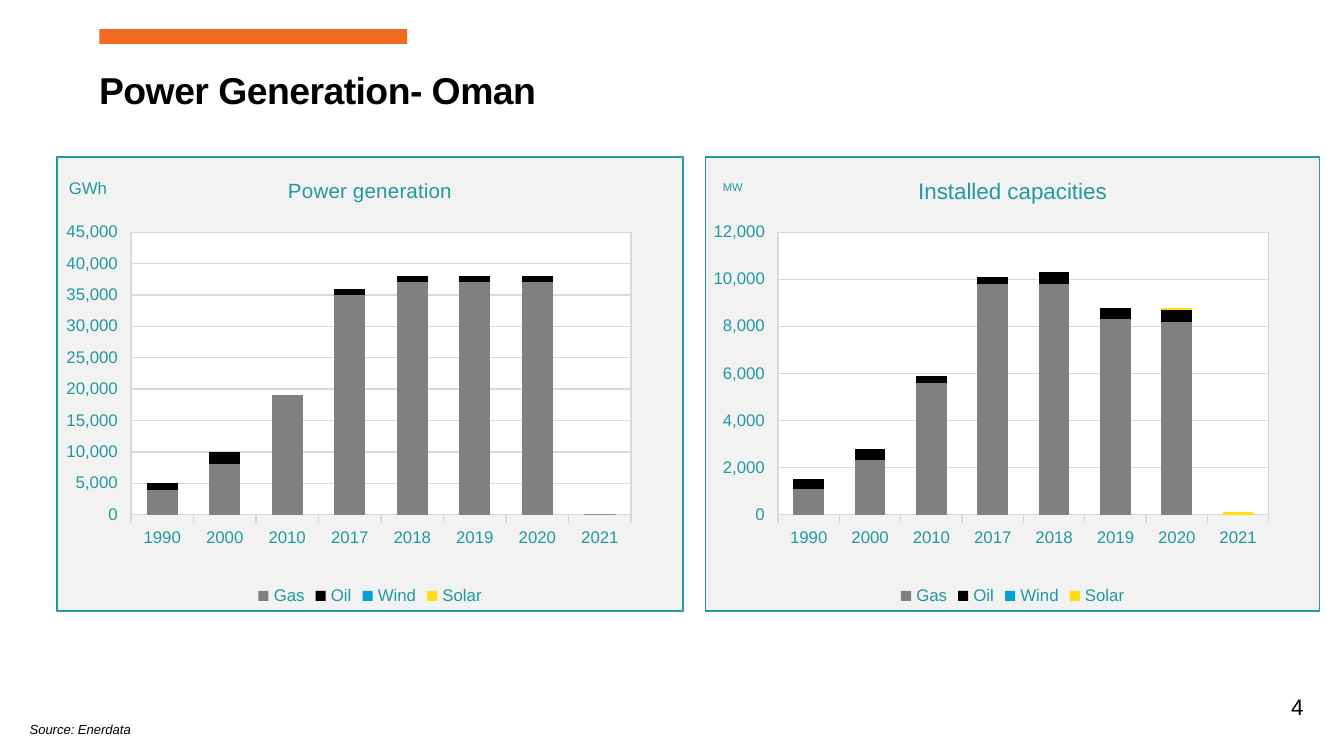
from pptx import Presentation
from pptx.chart.data import CategoryChartData
from pptx.dml.color import RGBColor
from pptx.enum.chart import XL_CHART_TYPE, XL_LEGEND_POSITION, XL_TICK_MARK
from pptx.enum.shapes import MSO_SHAPE
from pptx.enum.text import MSO_AUTO_SIZE, PP_ALIGN
from pptx.oxml import parse_xml
from pptx.oxml.ns import nsdecls, qn
from pptx.util import Pt

FONT = "Arial"
COLORS = {
    "text": "000000", "accent": "F26A22", "teal": "21999F",
    "panel": "F2F2F2", "plot": "FFFFFF", "grid": "D9D9D9",
}
SERIES_COLORS = {
    "Series 1": "EC6625", "Series 2": "854907", "Gas": "808080",
    "Oil": "000000", "Series 5": "006A48", "Series 6": "00758F",
    "Wind": "00A2D2", "Solar": "FFDC14", "Series 9": "887400",
}
LEGEND_NAMES = ("Gas", "Oil", "Wind", "Solar")
YEARS = ["1990", "2000", "2010", "2017", "2018", "2019", "2020", "2021"]

# Title positions are points from the panel's corner; other series are zero
GENERATION = {
    "title": "Power generation", "title_size": 11, "title_at": (122, 8.5),
    "unit": "GWh", "unit_size": 9, "unit_at": (4.7, 9),
    "maximum": 45000, "step": 5000,
    "series": {
        "Gas": [4000, 8000, 19000, 35000, 37000, 37000, 37000, 0],
        "Oil": [1000, 2000, 0, 1000, 1000, 1000, 1000, 0],
    },
}
CAPACITY = {
    "title": "Installed capacities", "title_size": 12, "title_at": (112, 8.5),
    "unit": "MW", "unit_size": 6, "unit_at": (8.2, 11.7),
    "maximum": 12000, "step": 2000,
    "series": {
        "Gas": [1100, 2300, 5600, 9800, 9800, 8300, 8200, 0],
        "Oil": [400, 500, 300, 300, 500, 500, 500, 0],
        "Solar": [0, 0, 0, 0, 0, 0, 100, 100],
    },
}


def color(name):
    return RGBColor.from_string(COLORS[name])


def style_font(font, size, name="teal", bold=False, italic=False):
    font.name = FONT
    font.size = Pt(size)
    font.bold = bold
    font.italic = italic
    font.color.rgb = color(name)


def add_text(page, box, text, size, bold=False, italic=False, align=PP_ALIGN.LEFT,
             wrap=True, inset=None, spacing=None):
    frame = page.shapes.add_textbox(*map(Pt, box)).text_frame
    frame.word_wrap = wrap
    frame.auto_size = MSO_AUTO_SIZE.SHAPE_TO_FIT_TEXT
    if inset is not None:
        frame.margin_left = frame.margin_right = Pt(inset)
        frame.margin_top = frame.margin_bottom = Pt(inset)
    para = frame.paragraphs[0]
    para.alignment = align
    span = para.add_run()
    span.text = text
    style_font(span.font, size, "text", bold, italic)
    if spacing is not None:
        span._r.get_or_add_rPr().set("spc", str(round(spacing * 100)))


def set_layout(element, index, **values):
    """Give a chart part a manual layout, in fractions of the chart."""
    for old in element.findall(qn("c:layout")):
        element.remove(old)
    target = '<c:layoutTarget val="inner"/>' if "w" in values else ""
    modes = "".join(f'<c:{key}Mode val="edge"/>' for key in "xy")
    sizes = "".join(f'<c:{key} val="{value}"/>' for key, value in values.items())
    element.insert(index, parse_xml(
        f'<c:layout {nsdecls("c")}><c:manualLayout>{target}{modes}{sizes}'
        "</c:manualLayout></c:layout>"))


def area_format(fill, line):
    return parse_xml(
        f'<c:spPr {nsdecls("c", "a")}>'
        f'<a:solidFill><a:srgbClr val="{COLORS[fill]}"/></a:solidFill>'
        f'<a:ln w="{Pt(0.75)}"><a:solidFill><a:srgbClr val="{COLORS[line]}"/>'
        "</a:solidFill></a:ln></c:spPr>")


def set_title(title, text, size, position, box):
    frame = title.text_frame
    frame.text = text
    style_font(frame.paragraphs[0].runs[0].font, size)
    frame._txBody.bodyPr.set("rot", "0")
    frame._txBody.bodyPr.set("vert", "horz")
    set_layout(title._element, 1, x=position[0] / box[2], y=position[1] / box[3])


def add_legend(chart):
    chart.has_legend = True
    chart.legend.position = XL_LEGEND_POSITION.BOTTOM
    chart.legend.include_in_layout = False
    style_font(chart.legend.font, 9)
    previous = chart.legend._element.find(qn("c:legendPos"))
    for index, name in enumerate(SERIES_COLORS):
        if name not in LEGEND_NAMES:
            entry = parse_xml(
                f'<c:legendEntry {nsdecls("c")}><c:idx val="{index}"/>'
                '<c:delete val="1"/></c:legendEntry>')
            previous.addnext(entry)
            previous = entry


def add_chart_panel(page, box, content):
    data = CategoryChartData(number_format="#,##0")
    data.categories = YEARS
    for name in SERIES_COLORS:
        data.add_series(name, content["series"].get(name, [0] * len(YEARS)))
    chart = page.shapes.add_chart(
        XL_CHART_TYPE.COLUMN_STACKED, *map(Pt, box), data).chart
    style_font(chart.font, 9)

    # Stacked columns
    plot = chart.plots[0]
    plot.gap_width = 100
    plot.overlap = 100
    plot.vary_by_categories = False
    for series in plot.series:
        series.format.fill.solid()
        series.format.fill.fore_color.rgb = RGBColor.from_string(
            SERIES_COLORS[series.name])

    # Axes
    years, amounts = chart.category_axis, chart.value_axis
    for axis in (years, amounts):
        style_font(axis.tick_labels.font, 9)
        axis.major_tick_mark = XL_TICK_MARK.OUTSIDE
    amounts.minimum_scale = 0
    amounts.maximum_scale = content["maximum"]
    amounts.major_unit = content["step"]
    amounts.tick_labels.number_format = "#,##0"
    amounts.tick_labels.number_format_is_linked = False
    amounts.format.line.fill.background()
    for line in (years.format.line, amounts.major_gridlines.format.line):
        line.color.rgb = color("grid")
        line.width = Pt(0.75)

    # Titles and legend
    set_title(chart.chart_title, content["title"], content["title_size"],
              content["title_at"], box)
    set_title(amounts.axis_title, content["unit"], content["unit_size"],
              content["unit_at"], box)
    add_legend(chart)

    # Panel and plot backgrounds
    body = chart._chartSpace.find(qn("c:chart"))
    body.addnext(area_format("panel", "teal"))
    plot_area = body.find(qn("c:plotArea"))
    set_layout(plot_area, 0, x=0.118, y=0.166, w=0.799, h=0.622)
    plot_area.append(area_format("plot", "grid"))


def add_header(page, box):
    left, top, width, height = box
    bar = page.shapes.add_shape(
        MSO_SHAPE.RECTANGLE, Pt(left), Pt(top), Pt(164.9), Pt(8))
    bar.shadow.inherit = False
    bar.fill.solid()
    bar.fill.fore_color.rgb = color("accent")
    bar.line.fill.background()
    add_text(page, (left - 7.2, top + 16.6, width, height - 16.6),
             "Power Generation- Oman", 20, bold=True, spacing=-0.3)


def add_footer(page, box):
    left, top, width, height = box
    add_text(page, (left, top + 11.5, 71.3, 15.8), "Source: Enerdata", 7,
             italic=True, wrap=False)
    add_text(page, (left + width - 103.7, top, 103.7, 14.4), "4", 12,
             align=PP_ALIGN.RIGHT, inset=0)


def main():
    deck = Presentation()
    deck.slide_width, deck.slide_height = Pt(720), Pt(405)
    page = deck.slides.add_slide(deck.slide_layouts[6])
    add_header(page, (53.2, 15.6, 360, 48.3))
    add_chart_panel(page, (377.6, 83.7, 329.8, 244), CAPACITY)
    add_chart_panel(page, (30.2, 83.7, 336.2, 244), GENERATION)
    add_footer(page, (8.8, 371.5, 689.6, 27.3))
    deck.save("out.pptx")


if __name__ == "__main__":
    main()
